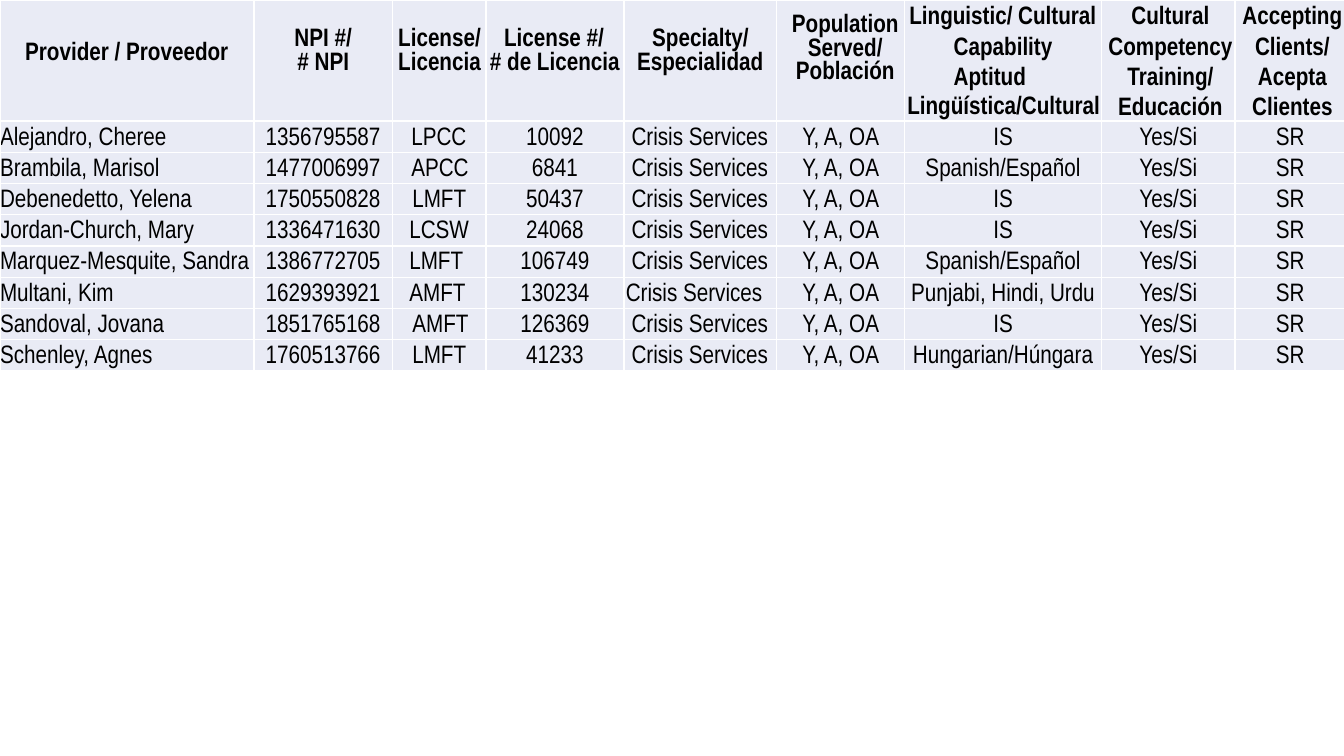
import pptx
import pptx.dml.color
import pptx.enum.text
import pptx.oxml
import pptx.oxml.ns
import pptx.util

Inches = pptx.util.Inches
Pt = pptx.util.Pt
LEFT = pptx.enum.text.PP_ALIGN.LEFT
CENTER = pptx.enum.text.PP_ALIGN.CENTER
RIGHT = pptx.enum.text.PP_ALIGN.RIGHT

COLORS = {"cell": "E9EBF5", "border": "FFFFFF", "text": "000000"}
FONT = "Arial Narrow"

column_widths = [2.52, 1.37, 0.93, 1.37, 1.51, 1.27, 1.96, 1.32, 1.09]
header_height, row_height = 1.2, 0.31

# header: top margin, then paragraphs of text, alignment, left, first line, spacing
headers = [
    (0.42, [("Provider / Proveedor", LEFT, 0.25, 0, None)]),
    (0.28, [("NPI #/\v# NPI", LEFT, 0.43, -0.03, None)]),
    (0.28, [("License/ Licencia", LEFT, 0.06, 0, None)]),
    (0.28, [("License #/\v# de Licencia", LEFT, 0.04, 0.14, None)]),
    (0.28, [("Specialty/ Especialidad", LEFT, 0.13, 0.15, None)]),
    (0.14, [("Population Served/ Población", CENTER, 0.1, 0, None)]),
    (0, [("Linguistic/ Cultural Capability Aptitud", LEFT, 0.49, -0.44, 21.6),
         ("Lingüística/Cultural", LEFT, 0.03, 0, 20.6)]),
    (0, [("Cultural Competency Training/ Educación", CENTER, 0.04, 0, 21.6)]),
    (0, [("Accepting Clients/ Acepta Clientes", CENTER, 0.05, 0, 21.6)]),
]

providers = [
    ("Alejandro, Cheree", "1356795587", "LPCC", 0.19, "10092", "Crisis Services", "IS"),
    ("Brambila, Marisol", "1477006997", "APCC", 0.19, "6841", "Crisis Services", "Spanish/Español"),
    ("Debenedetto, Yelena", "1750550828", "LMFT", 0.2, "50437", "Crisis Services", "IS"),
    ("Jordan-Church, Mary", "1336471630", "LCSW", 0.17, "24068", "Crisis Services", "IS"),
    ("Marquez-Mesquite, Sandra", "1386772705", "LMFT", 0.17, "106749", "Crisis Services", "Spanish/Español"),
    ("Multani, Kim", "1629393921", "AMFT", 0.17, "130234", "Crisis Services ", "Punjabi, Hindi, Urdu"),
    ("Sandoval, Jovana", "1851765168", "AMFT", 0.2, "126369", "Crisis Services", "IS"),
    ("Schenley, Agnes", "1760513766", "LMFT", 0.2, "41233", "Crisis Services", "Hungarian/Húngara"),
]
alignments = [LEFT, CENTER, LEFT, CENTER, RIGHT, RIGHT, CENTER, CENTER, RIGHT]
right_indents = {4: 0.08, 5: 0.25, 8: 0.4}


def style_cell(cell, top, borders):
    cell.margin_left = cell.margin_right = cell.margin_bottom = 0
    cell.margin_top = Inches(top)
    tcPr = cell._tc.get_or_add_tcPr()
    for side, width in borders.items():
        tcPr.append(pptx.oxml.parse_xml(
            f'<a:ln{side} {pptx.oxml.ns.nsdecls("a")} w="{Pt(width)}"><a:solidFill>'
            f'<a:srgbClr val="{COLORS["border"]}"/></a:solidFill></a:ln{side}>'))
    cell.fill.solid()
    cell.fill.fore_color.rgb = pptx.dml.color.RGBColor.from_string(COLORS["cell"])


def write_paragraph(p, text, align, left, first, right, spacing, bold):
    p.text = text
    p.alignment = align
    if spacing:
        p.line_spacing = Pt(spacing)
    pPr = p._p.get_or_add_pPr()
    for name, length in (("marL", left), ("marR", right), ("indent", first)):
        pPr.set(name, str(Inches(length)))
    for r in p.runs:
        r.font.name = FONT
        r.font.size = Pt(18)
        r.font.bold = bold
        r.font.color.rgb = pptx.dml.color.RGBColor.from_string(COLORS["text"])


prs = pptx.Presentation()
prs.slide_width = Inches(13.33)
prs.slide_height = Inches(7.5)
s = prs.slides.add_slide(prs.slide_layouts[6])

row_heights = [header_height] + [row_height] * len(providers)
table = s.shapes.add_table(
    len(row_heights), len(column_widths), 0, 0,
    Inches(sum(column_widths)), Inches(sum(row_heights))).table
table.first_row = False
table.horz_banding = False
for column, width in zip(table.columns, column_widths):
    column.width = Inches(width)
for row, height in zip(table.rows, row_heights):
    row.height = Inches(height)

last_column = len(column_widths) - 1
for i in range(len(row_heights)):
    for j in range(len(column_widths)):
        borders = {"L": 0.5 if j == 0 else 1, "R": 0.5 if j == last_column else 1,
                   "T": 0.5 if i == 0 else 1, "B": 1}
        style_cell(table.cell(i, j), headers[j][0] if i == 0 else 0, borders)

for j, (top, paragraphs) in enumerate(headers):
    tf = table.cell(0, j).text_frame
    for k, (text, align, left, first, spacing) in enumerate(paragraphs):
        p = tf.paragraphs[0] if k == 0 else tf.add_paragraph()
        write_paragraph(p, text, align, left, first, 0, spacing, True)

for i, (name, npi, license_type, indent, number, specialty, language) in enumerate(providers, 1):
    values = [name, npi, license_type, number, specialty, "Y, A, OA", language, "Yes/Si", "SR"]
    for j, text in enumerate(values):
        write_paragraph(table.cell(i, j).text_frame.paragraphs[0], text, alignments[j],
                        indent if j == 2 else 0, 0, right_indents.get(j, 0), 21, False)

prs.save("out.pptx")
